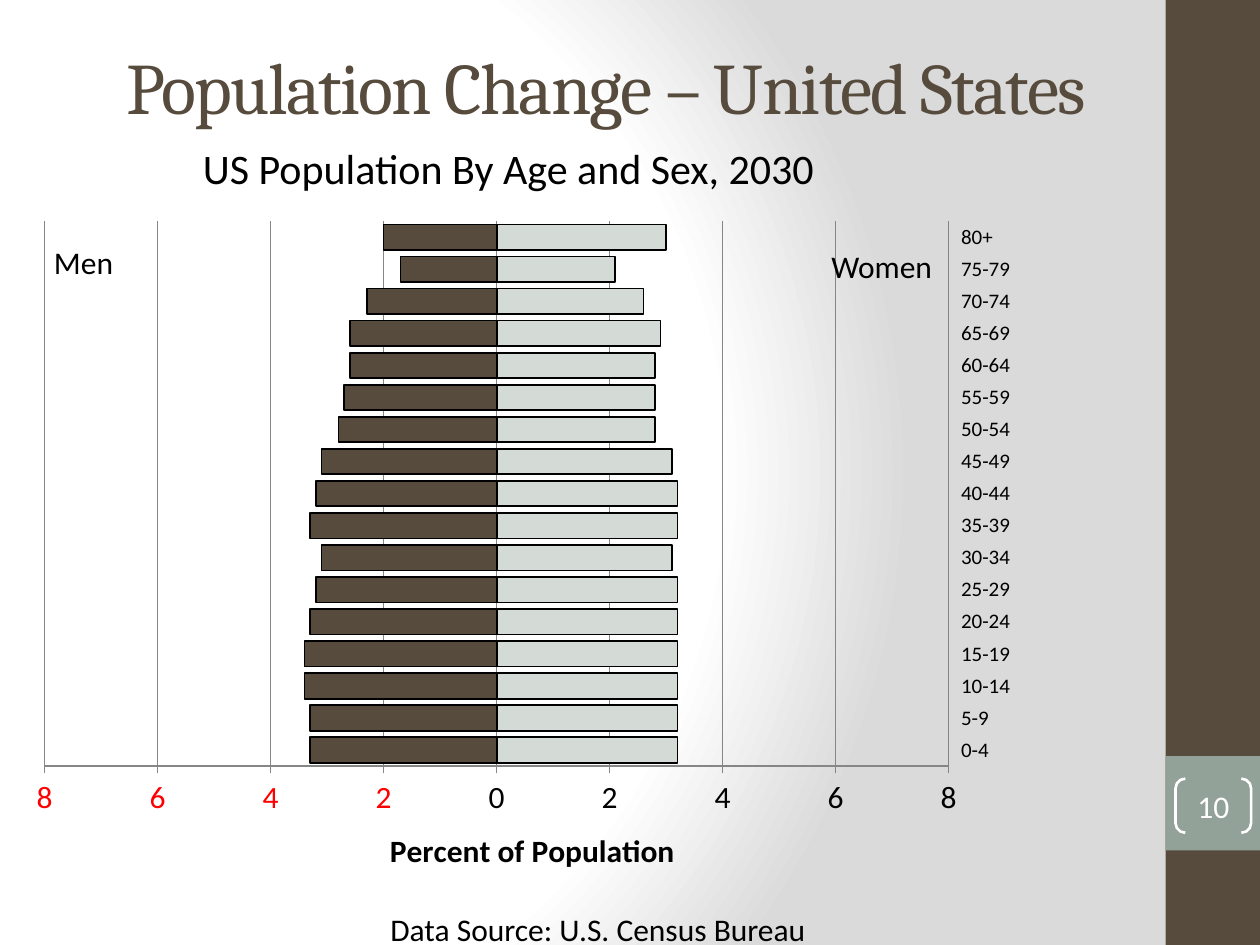
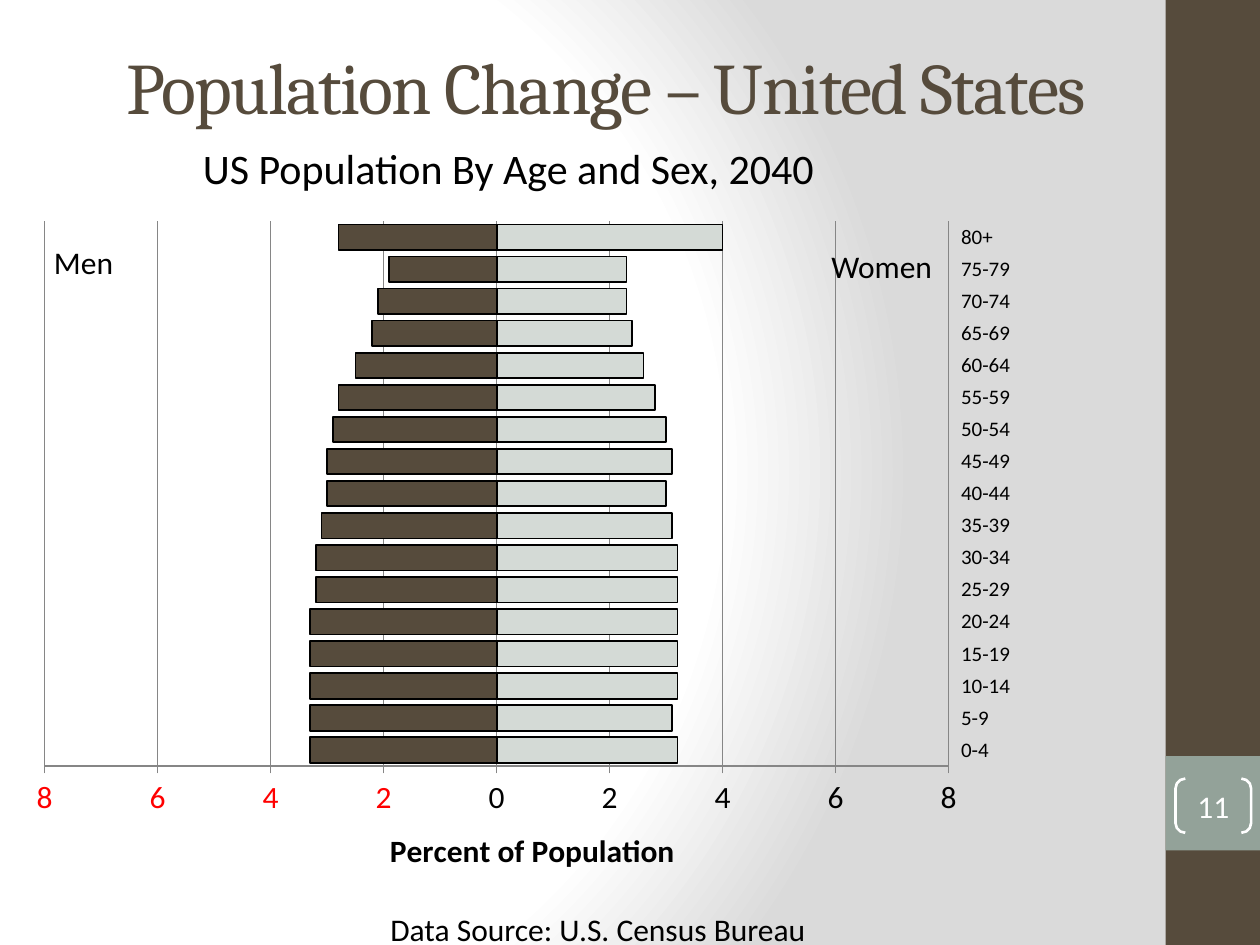
from lxml import etree
from pptx import Presentation
from pptx.chart.data import CategoryChartData
from pptx.dml.color import RGBColor
from pptx.enum.chart import XL_CHART_TYPE as ChartType, XL_TICK_LABEL_POSITION as LabelPosition
from pptx.enum.chart import XL_TICK_MARK as TickMark
from pptx.enum.shapes import MSO_SHAPE as Preset
from pptx.enum.text import MSO_ANCHOR as Anchor, MSO_AUTO_SIZE as AutoSize, PP_ALIGN as Align
from pptx.oxml.ns import qn
from pptx.util import Inches, Pt

COLORS = {
    "brown": "564B3C", "sage": "93A299", "pale": "D4DAD6", "grid": "868686",
    "black": "000000", "white": "FFFFFF", "gray": "DADADA",
}
BODY_FONT, TITLE_FONT = "Calibri", "Cambria"
AGES = [f"{age}-{age + 4}" for age in range(0, 80, 5)] + ["80+"]
TITLE = "Population Change – United States"

# Percent of population by age group, youngest first
PYRAMIDS = [
    {
        "year": 2030, "number": 10,
        "men": [3.3, 3.3, 3.4, 3.4, 3.3, 3.2, 3.1, 3.3, 3.2, 3.1, 2.8, 2.7, 2.6, 2.6, 2.3, 1.7, 2.0],
        "women": [3.2, 3.2, 3.2, 3.2, 3.2, 3.2, 3.1, 3.2, 3.2, 3.1, 2.8, 2.8, 2.8, 2.9, 2.6, 2.1, 3.0],
    },
    {
        "year": 2040, "number": 11,
        "men": [3.3, 3.3, 3.3, 3.3, 3.3, 3.2, 3.2, 3.1, 3.0, 3.0, 2.9, 2.8, 2.5, 2.2, 2.1, 1.9, 2.8],
        "women": [3.2, 3.1, 3.2, 3.2, 3.2, 3.2, 3.2, 3.1, 3.0, 3.1, 3.0, 2.8, 2.6, 2.4, 2.3, 2.3, 4.0],
    },
]


def color(name):
    return RGBColor.from_string(COLORS[name])


def style_font(font, size, ink="black", name=BODY_FONT, bold=False):
    font.name, font.size, font.bold = name, Pt(size), bold
    font.color.rgb = color(ink)


def place(shape, box):
    shape.left, shape.top, shape.width, shape.height = map(Inches, box)


def set_background(master):
    """Give every slide the round white-to-gray gradient."""
    master.background.fill.gradient()
    gradient = next(master._element.iter(qn("a:gradFill")))
    for child in list(gradient):
        gradient.remove(child)
    stops = etree.SubElement(gradient, qn("a:gsLst"))
    for position, name in ((0, "white"), (75, "white"), (100, "gray")):
        stop = etree.SubElement(stops, qn("a:gs"), pos=str(position * 1000))
        etree.SubElement(stop, qn("a:srgbClr"), val=COLORS[name])
    circle = etree.SubElement(gradient, qn("a:path"), {"path": "circle"})
    etree.SubElement(circle, qn("a:fillToRect"), l="20000", t="50000", r="100000", b="50000")


def add_block(page, box, fill):
    block = page.shapes.add_shape(Preset.RECTANGLE, *map(Inches, box))
    block.shadow.inherit = False
    block.fill.solid()
    block.fill.fore_color.rgb = color(fill)
    block.line.fill.background()


def add_side_band(page, box, number):
    """Brown band with the page number in a bracketed sage square."""
    left, top, width, height = box
    add_block(page, box, "brown")
    square_top = top + 0.8 * height
    add_block(page, (left, square_top, width, width), "sage")
    bracket_box = (left + 0.08, square_top + 0.18, 0.6, 0.43)
    bracket = page.shapes.add_shape(Preset.DOUBLE_BRACKET, *map(Inches, bracket_box))
    bracket.shadow.inherit = False
    bracket.adjustments[0] = 0.18
    bracket.fill.background()
    bracket.line.color.rgb = color("white")
    bracket.line.width = Pt(1.5)
    frame = bracket.text_frame
    frame.margin_left = frame.margin_right = frame.margin_top = frame.margin_bottom = 0
    frame.vertical_anchor = Anchor.MIDDLE
    para = frame.paragraphs[0]
    para.text, para.alignment = str(number), Align.CENTER
    style_font(para.font, 18, "white")


def fill_title(page, box):
    title = page.shapes.title
    place(title, box)
    title.text_frame.text = TITLE
    title.text_frame.vertical_anchor = Anchor.MIDDLE
    title.text_frame.auto_size = AutoSize.NONE
    para = title.text_frame.paragraphs[0]
    para.alignment = Align.LEFT
    style_font(para.font, 41.4, "brown", TITLE_FONT)
    para.runs[0]._r.get_or_add_rPr().set("spc", "-100")


def fill_subtitle(page, box, year):
    body = page.placeholders[1]
    place(body, box)
    body.text_frame.text = f"US Population By Age and Sex, {year}"
    body.text_frame.auto_size = AutoSize.NONE
    para = body.text_frame.paragraphs[0]
    style_font(para.font, 24)
    properties = para._p.get_or_add_pPr()
    properties.set("marL", str(Inches(0.38)))
    properties.set("indent", str(Inches(-0.25)))
    properties.insert(0, etree.Element(qn("a:buNone")))


def add_label(page, box, text):
    label = page.shapes.add_textbox(*map(Inches, box))
    frame = label.text_frame
    frame.word_wrap = True
    frame.auto_size = AutoSize.SHAPE_TO_FIT_TEXT
    frame.text = text
    style_font(frame.paragraphs[0].font, 18)


def set_layout(parent, index, inner=False, **sizes):
    """Fix a chart part at fractions of the chart area."""
    for old in parent.findall(qn("c:layout")):
        parent.remove(old)
    layout = etree.Element(qn("c:layout"))
    parent.insert(index, layout)
    manual = etree.SubElement(layout, qn("c:manualLayout"))
    if inner:
        etree.SubElement(manual, qn("c:layoutTarget"), val="inner")
    for side in ("x", "y"):
        etree.SubElement(manual, qn(f"c:{side}Mode"), val="edge")
    for name, value in sizes.items():
        etree.SubElement(manual, qn(f"c:{name}"), val=str(value))


def add_pyramid(page, box, men, women):
    """Bar chart with men to the left of zero and women to the right."""
    data = CategoryChartData()
    data.categories = AGES
    data.add_series("Series 1", [-share for share in men])
    data.add_series("Series 2", women)
    chart = page.shapes.add_chart(ChartType.BAR_CLUSTERED, *map(Inches, box), data).chart
    chart.has_title = chart.has_legend = False
    style_font(chart.font, 18)

    # Bars
    plot = chart.plots[0]
    plot.gap_width, plot.overlap, plot.vary_by_categories = 26, 100, False
    for series, fill in zip(plot.series, ("brown", "pale")):
        series.invert_if_negative = False
        series.format.fill.solid()
        series.format.fill.fore_color.rgb = color(fill)
        series.format.line.color.rgb = color("black")
        series.format.line.width = Pt(1)

    # Age axis
    ages = chart.category_axis
    ages.major_tick_mark = ages.minor_tick_mark = TickMark.NONE
    ages.tick_label_position = LabelPosition.HIGH
    ages.has_major_gridlines = False
    style_font(ages.tick_labels.font, 12)

    # Percent axis
    percent = chart.value_axis
    percent.minimum_scale, percent.maximum_scale, percent.major_unit = -8, 8, 2
    percent.major_tick_mark, percent.minor_tick_mark = TickMark.OUTSIDE, TickMark.NONE
    percent.has_major_gridlines = True
    percent.tick_labels.number_format = "#,##0;[Red]#,##0"
    percent.tick_labels.number_format_is_linked = False
    for line in (ages.format.line, percent.format.line, percent.major_gridlines.format.line):
        line.color.rgb = color("grid")
        line.width = Pt(0.75)
    heading = percent.axis_title
    heading.text_frame.text = "Percent of Population"
    style_font(heading.text_frame.paragraphs[0].font, 18, bold=True)

    set_layout(heading._element, 1, x=0.36, y=0.93)
    plot_area = next(chart._chartSpace.iter(qn("c:plotArea")))
    set_layout(plot_area, 0, inner=True, x=0.023, y=0.033, w=0.897, h=0.812)


def add_pyramid_slide(deck, pyramid):
    page = deck.slides.add_slide(deck.slide_layouts[1])
    add_side_band(page, (9.25, 0, 0.75, 7.5), pyramid["number"])
    fill_title(page, (0.9, 0.3, 8.2, 0.76))
    add_pyramid(page, (0.17, 1.58, 8, 5.4), pyramid["men"], pyramid["women"])
    fill_subtitle(page, (1.38, 1.08, 8.62, 0.68), pyramid["year"])
    add_label(page, (0.33, 1.88, 0.72, 0.4), "Men")
    add_label(page, (6.5, 1.91, 1.12, 0.37), "Women")
    add_label(page, (3, 7.17, 4, 0.37), "Data Source: U.S. Census Bureau")


def main():
    deck = Presentation()
    deck.slide_width, deck.slide_height = Inches(10), Inches(7.5)
    set_background(deck.slide_master)
    for pyramid in PYRAMIDS:
        add_pyramid_slide(deck, pyramid)
    deck.save("out.pptx")


if __name__ == "__main__":
    main()
